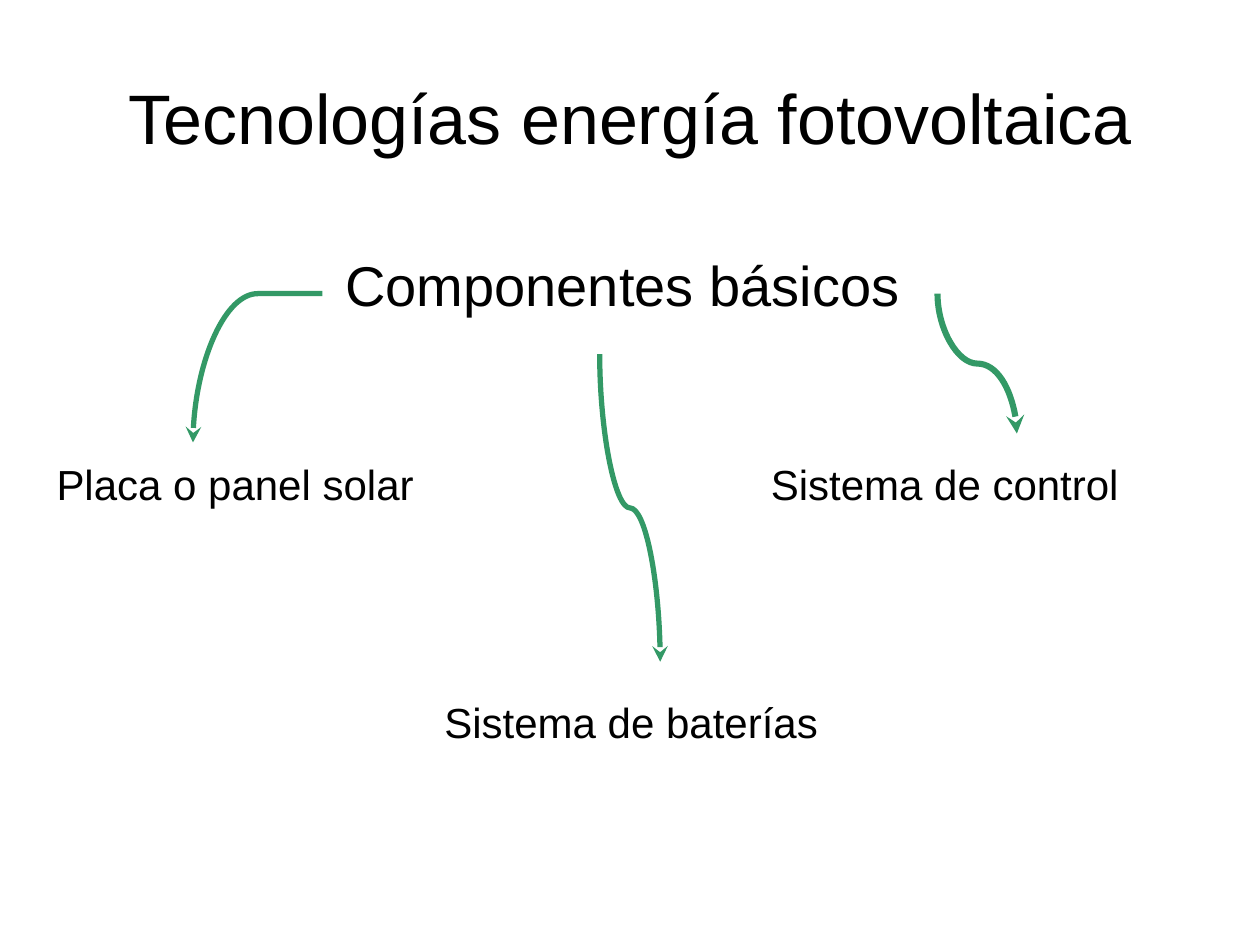
from dataclasses import dataclass

from lxml import etree
from pptx import Presentation
from pptx.dml.color import RGBColor
from pptx.enum.shapes import MSO_CONNECTOR
from pptx.enum.text import MSO_ANCHOR, MSO_AUTO_SIZE, PP_ALIGN
from pptx.oxml.ns import qn
from pptx.util import Cm, Pt

CURVE = MSO_CONNECTOR.CURVE
MIDDLE = MSO_ANCHOR.MIDDLE
FIT_SHAPE = MSO_AUTO_SIZE.SHAPE_TO_FIT_TEXT
NO_FIT = MSO_AUTO_SIZE.NONE
CENTER = PP_ALIGN.CENTER
LEFT = PP_ALIGN.LEFT
TITLE_ONLY = 5


@dataclass(frozen=True)
class Theme:
    font: str = "Arial"
    text: RGBColor = RGBColor(0, 0, 0)
    arrow: RGBColor = RGBColor(0x33, 0x99, 0x66)
    background: RGBColor = RGBColor(255, 255, 255)
    title_size: int = 40
    heading_size: int = 32
    label_size: int = 24


class SlideBuilder:
    def __init__(self, presentation, theme):
        self.theme = theme
        self.slide = presentation.slides.add_slide(presentation.slide_layouts[TITLE_ONLY])
        fill = self.slide.background.fill
        fill.solid()
        fill.fore_color.rgb = theme.background

    def set_text(self, shape, text, size, alignment):
        shape.text_frame.text = text
        paragraph = shape.text_frame.paragraphs[0]
        paragraph.alignment = alignment
        font = paragraph.runs[0].font
        font.name = self.theme.font
        font.size = Pt(size)
        font.color.rgb = self.theme.text

    def title(self, text, left, top, width, height):
        shape = self.slide.shapes.title
        shape.left, shape.top = Cm(left), Cm(top)
        shape.width, shape.height = Cm(width), Cm(height)
        self.set_text(shape, text, self.theme.title_size, CENTER)
        shape.text_frame.vertical_anchor = MIDDLE
        shape.text_frame.auto_size = NO_FIT

    def label(self, text, size, left, top, width, height, wrap=False):
        shape = self.slide.shapes.add_textbox(Cm(left), Cm(top), Cm(width), Cm(height))
        self.set_text(shape, text, size, LEFT)
        shape.text_frame.word_wrap = wrap
        shape.text_frame.auto_size = FIT_SHAPE

    def falling_arrow(self, start, end, weight, bend):
        center_x, center_y = (start[0] + end[0]) / 2, (start[1] + end[1]) / 2
        half_drop = (end[1] - start[1]) / 2
        half_shift = abs(end[0] - start[0]) / 2
        goes_left = end[0] < start[0]
        reach = half_drop if goes_left else -half_drop
        connector = self.slide.shapes.add_connector(
            CURVE,
            Cm(center_x - reach), Cm(center_y - half_shift),
            Cm(center_x + reach), Cm(center_y + half_shift),
        )
        connector.line.color.rgb = self.theme.arrow
        connector.line.width = Pt(weight)
        properties = connector._element.spPr
        angle = 90 if goes_left else 270
        properties.find(qn("a:xfrm")).set("rot", str(angle * 60000))
        geometry = properties.find(qn("a:prstGeom"))
        adjustments = geometry.find(qn("a:avLst"))
        etree.SubElement(adjustments, qn("a:gd"), name="adj1", fmla=f"val {bend}")
        etree.SubElement(properties.find(qn("a:ln")), qn("a:tailEnd"), type="stealth")
        etree.SubElement(properties, qn("a:effectLst"))


def main():
    presentation = Presentation()
    presentation.slide_width, presentation.slide_height = Cm(25.4), Cm(19.05)
    theme = Theme()
    builder = SlideBuilder(presentation, theme)

    builder.title("Tecnologías energía fotovoltaica", 1.27, 0.76, 22.86, 3.18)
    builder.label("Componentes básicos", theme.heading_size, 6.71, 4.93, 11.99, 1.6)
    components = [
        ("Placa o panel solar", 0.89, 9.12, 7.72, False),
        ("Sistema de baterías", 8.71, 13.92, 8.05, True),
        ("Sistema de control", 15.29, 9.12, 7.52, False),
    ]
    for text, left, top, width, wrap in components:
        builder.label(text, theme.label_size, left, top, width, 1.27, wrap)

    builder.falling_arrow((6.5, 5.92), (3.89, 8.92), 3, 0)
    builder.falling_arrow((12.09, 7.14), (13.31, 13.34), 3, 50000)
    builder.falling_arrow((18.9, 5.92), (20.5, 8.74), 3.5, 50000)

    presentation.save("out.pptx")


if __name__ == "__main__":
    main()
